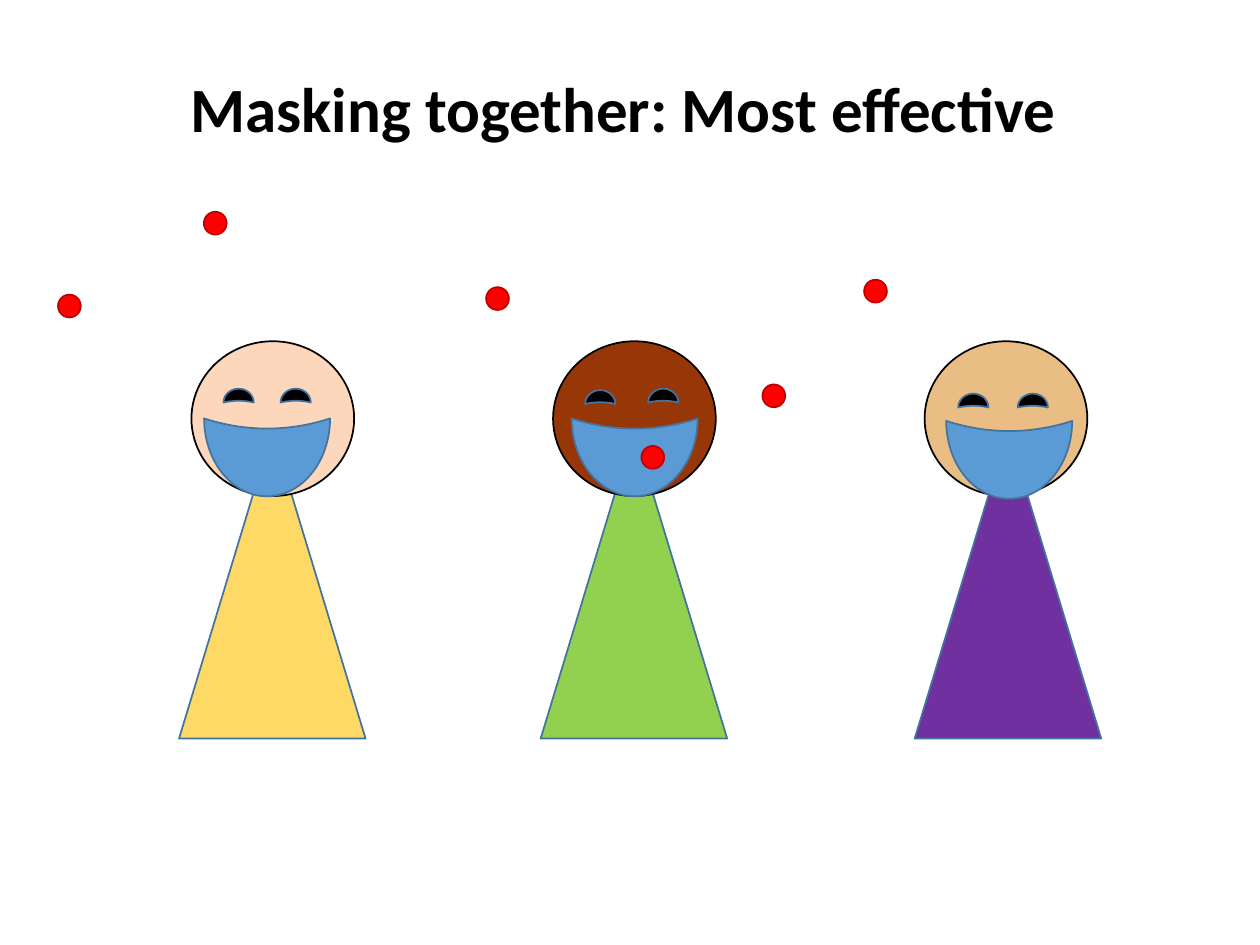
import pptx
import pptx.util
import pptx.dml.color
import pptx.enum.shapes
import pptx.enum.text
from dataclasses import dataclass

Cm = pptx.util.Cm
Pt = pptx.util.Pt
Kind = pptx.enum.shapes.MSO_SHAPE


@dataclass(frozen=True)
class Theme:
    font: str = "Calibri"
    title_size: int = 36
    line_width: int = 1
    black: str = "000000"
    outline: str = "43739E"
    mask: str = "5B9BD5"
    germ: str = "FF0000"
    germ_line: str = "C00000"


THEME = Theme()
TITLE = "Masking together: Most effective"

# All positions and sizes are in centimetres.
TITLE_BOX = (0, 0.33, 25.12, 2.74)
BODY_SIZE = (3.76, 6.2)
HEAD_SIZE = (3.28, 3.12)
MASK_SIZE = (1.57, 2.54)
EYE_SIZE = (0.28, 0.61)
GERM_SIZE = (0.46, 0.46)

PEOPLE = [
    dict(shirt="FFD966", skin="FCD7BC", body=(3.61, 8.69), head=(3.86, 6.88),
         mask=(4.6, 7.95), eyes=[(4.67, 7.67), (5.82, 7.67)]),
    dict(shirt="92D050", skin="973707", body=(10.9, 8.69), head=(11.15, 6.88),
         mask=(12.01, 7.95), eyes=[(11.96, 7.7), (13.23, 7.67)]),
    dict(shirt="7030A0", skin="E9BD83", body=(18.44, 8.69), head=(18.64, 6.88),
         mask=(19.56, 8), eyes=[(19.48, 7.77), (20.68, 7.77)]),
]
GERMS = [(1.17, 5.94), (12.93, 8.99), (9.8, 5.79),
         (4.11, 4.27), (17.42, 5.64), (15.37, 7.75)]


def color(value):
    return pptx.dml.color.RGBColor.from_string(value)


def add_figure(page, kind, place, size, fill, line=THEME.outline, turn=0, bend=None):
    """Add a preset shape; turn is its rotation, bend its first adjustment."""
    shape = page.shapes.add_shape(kind, *map(Cm, place + size))
    shape.shadow.inherit = False
    shape.fill.solid()
    shape.fill.fore_color.rgb = color(fill)
    shape.line.color.rgb = color(line)
    shape.line.width = Pt(THEME.line_width)
    shape.rotation = turn
    if bend is not None:
        shape.adjustments[0] = bend


def write_text(box, text, size, bold, ink):
    frame = box.text_frame
    frame.word_wrap = True
    frame.auto_size = pptx.enum.text.MSO_AUTO_SIZE.NONE
    frame.vertical_anchor = pptx.enum.text.MSO_ANCHOR.BOTTOM
    para = frame.paragraphs[0]
    para.alignment = pptx.enum.text.PP_ALIGN.CENTER
    para.line_spacing = 0.9
    span = para.add_run()
    span.text = text
    span.font.name = THEME.font
    span.font.size = Pt(size)
    span.font.bold = bold
    span.font.color.rgb = color(ink)


def add_person(page, person):
    add_figure(page, Kind.ISOSCELES_TRIANGLE, person["body"], BODY_SIZE, person["shirt"])
    add_figure(page, Kind.OVAL, person["head"], HEAD_SIZE, person["skin"], line=THEME.black)
    for eye in person["eyes"]:
        add_figure(page, Kind.MOON, eye, EYE_SIZE, THEME.black, turn=90, bend=0.875)
    add_figure(page, Kind.MOON, person["mask"], MASK_SIZE, THEME.mask, turn=270, bend=0.87)


def main():
    deck = pptx.Presentation()
    deck.slide_width, deck.slide_height = Cm(25.4), Cm(19.05)
    page = deck.slides.add_slide(deck.slide_layouts.get_by_name("Title Only"))

    title = page.shapes.title
    title.left, title.top, title.width, title.height = map(Cm, TITLE_BOX)
    write_text(title, TITLE, size=THEME.title_size, bold=True, ink=THEME.black)

    for person in PEOPLE:
        add_person(page, person)
    for germ in GERMS:
        add_figure(page, Kind.OVAL, germ, GERM_SIZE, THEME.germ, line=THEME.germ_line)

    deck.save("out.pptx")


if __name__ == "__main__":
    main()
